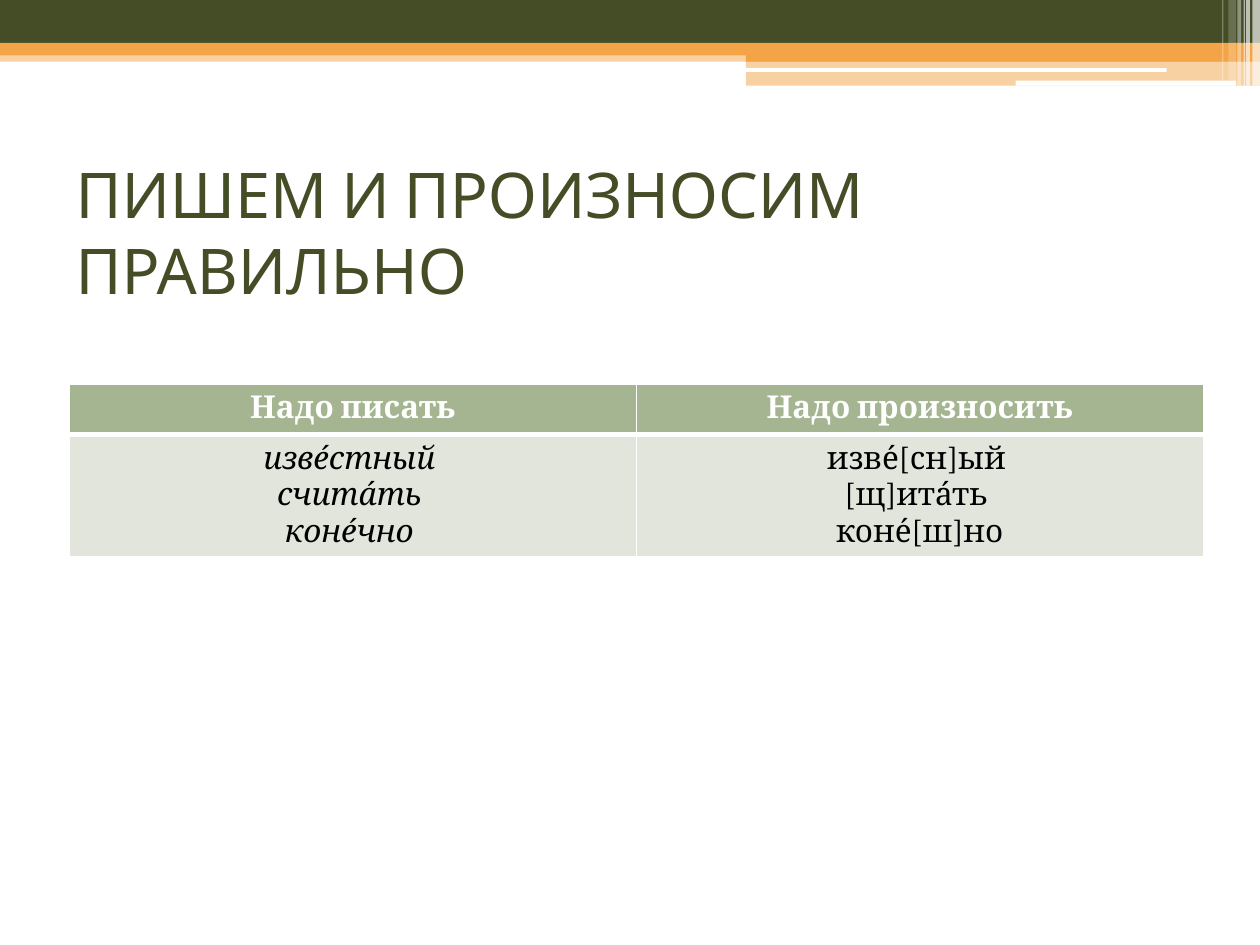
"""Build a pronunciation slide with a banded header and a two-column table."""
from lxml import etree
from pptx import Presentation
from pptx.dml.color import RGBColor
from pptx.enum.shapes import MSO_SHAPE
from pptx.enum.text import MSO_ANCHOR, MSO_AUTO_SIZE, PP_ALIGN
from pptx.oxml.ns import qn
from pptx.util import Inches, Pt

RECT, ROUND = MSO_SHAPE.RECTANGLE, MSO_SHAPE.ROUNDED_RECTANGLE
CENTER, LEFT = PP_ALIGN.CENTER, PP_ALIGN.LEFT
MIDDLE, NO_FIT = MSO_ANCHOR.MIDDLE, MSO_AUTO_SIZE.NONE
OLIVE, ORANGE, WHITE, BLACK = "444D26", "F3A447", "FFFFFF", "000000"
SAGE, PALE = "A5B592", "E1E5DC"
WIDTH, HEIGHT = 10, 7.5

TITLE = "ПИШЕМ И ПРОИЗНОСИМ ПРАВИЛЬНО"
HEADINGS = ["Надо писать", "Надо произносить"]
WORDS = [
    ["изве́стный ", "счита́ть ", "коне́чно "],
    ["изве́[сн]ый ", "[щ]ита́ть ", "коне́[ш]но"],
]
# left, top, width, height, colour, opacity
BANDS = [
    (0, 0.4, WIDTH, 0.09, ORANGE, 50),
    (0, 0, WIDTH, 0.34, OLIVE, 100),
    (0, 0.34, WIDTH, 0.1, ORANGE, 100),
    (5.92, 0.39, 4.08, 0.1, ORANGE, 100),
    (5.92, 0.48, 4.08, 0.2, ORANGE, 50),
]
SLOTS = [(5.91, 0.54, 3.35, 0.03, WHITE, 100), (8.06, 0.64, 1.75, 0.04, WHITE, 100)]
# left, width, height, opacity
STRIPES = [
    (9.94, 0.06, 0.68, 65), (9.89, 0.03, 0.68, 65), (9.87, 0.01, 0.68, 60),
    (9.82, 0.03, 0.68, 40), (9.75, 0.06, 0.64, 20), (9.7, 0.01, 0.64, 30),
]


def rgb(colour):
    """Turn a hex string into a colour."""
    return RGBColor.from_string(colour)


def add_bar(slide, kind, left, top, width, height, colour, opacity):
    """Draw one plain bar of the header ornament."""
    bar = slide.shapes.add_shape(kind, *map(Inches, (left, top, width, height)))
    bar.shadow.inherit = False
    bar.fill.solid()
    bar.fill.fore_color.rgb = rgb(colour)
    bar.line.fill.background()
    if opacity < 100:
        tint = bar.fill._xPr.find(".//" + qn("a:srgbClr"))
        etree.SubElement(tint, qn("a:alpha"), val=str(opacity * 1000))


def write(paragraph, text, font, size, colour, align, bold=False, italic=False):
    """Add one formatted run to a paragraph."""
    paragraph.alignment = align
    run = paragraph.add_run()
    run.text = text
    run.font.name, run.font.size = font, Pt(size)
    run.font.bold, run.font.italic = bold, italic
    run.font.color.rgb = rgb(colour)


def style_cell(cell, fill, bottom=1, top=1):
    """Give a cell white borders and a solid fill."""
    properties = cell._tc.get_or_add_tcPr()
    for side, points in (("L", 1), ("R", 1), ("T", top), ("B", bottom)):
        border = etree.SubElement(properties, qn("a:ln" + side), w=str(Pt(points)))
        paint = etree.SubElement(border, qn("a:solidFill"))
        etree.SubElement(paint, qn("a:srgbClr"), val=WHITE)
    cell.fill.solid()
    cell.fill.fore_color.rgb = rgb(fill)


def add_words(slide):
    """Add the table of spellings and pronunciations."""
    table = slide.shapes.add_table(
        2, len(HEADINGS), *map(Inches, (0.55, 3.05, 9, 1.36))).table
    for row, height in zip(table.rows, (0.4, 0.96)):
        row.height = Inches(height)
    for column, (heading, words) in enumerate(zip(HEADINGS, WORDS)):
        header, body = table.cell(0, column), table.cell(1, column)
        style_cell(header, SAGE, bottom=3)
        style_cell(body, PALE, top=3)
        write(header.text_frame.paragraphs[0], heading, "Cambria", 18, WHITE, CENTER, bold=True)
        frame = body.text_frame
        for index, word in enumerate(words):
            line = frame.add_paragraph() if index else frame.paragraphs[0]
            write(line, word, "Cambria", 18, BLACK, CENTER, italic=column == 0)


def main():
    """Assemble and save the slide."""
    deck = Presentation()
    deck.slide_width, deck.slide_height = Inches(WIDTH), Inches(HEIGHT)
    slide = deck.slides.add_slide(deck.slide_layouts[5])
    for band in BANDS:
        add_bar(slide, RECT, *band)
    for slot in SLOTS:
        add_bar(slide, ROUND, *slot)
    for left, width, height, opacity in STRIPES:
        add_bar(slide, RECT, left, 0, width, height, WHITE, opacity)

    title = slide.shapes.title
    title.left, title.top, title.width, title.height = map(Inches, (0.5, 1.25, 9, 1.17))
    frame = title.text_frame
    frame.word_wrap, frame.auto_size, frame.vertical_anchor = True, NO_FIT, MIDDLE
    write(frame.paragraphs[0], TITLE, "Cabin", 36, OLIVE, LEFT)

    add_words(slide)
    deck.save("out.pptx")


if __name__ == "__main__":
    main()
